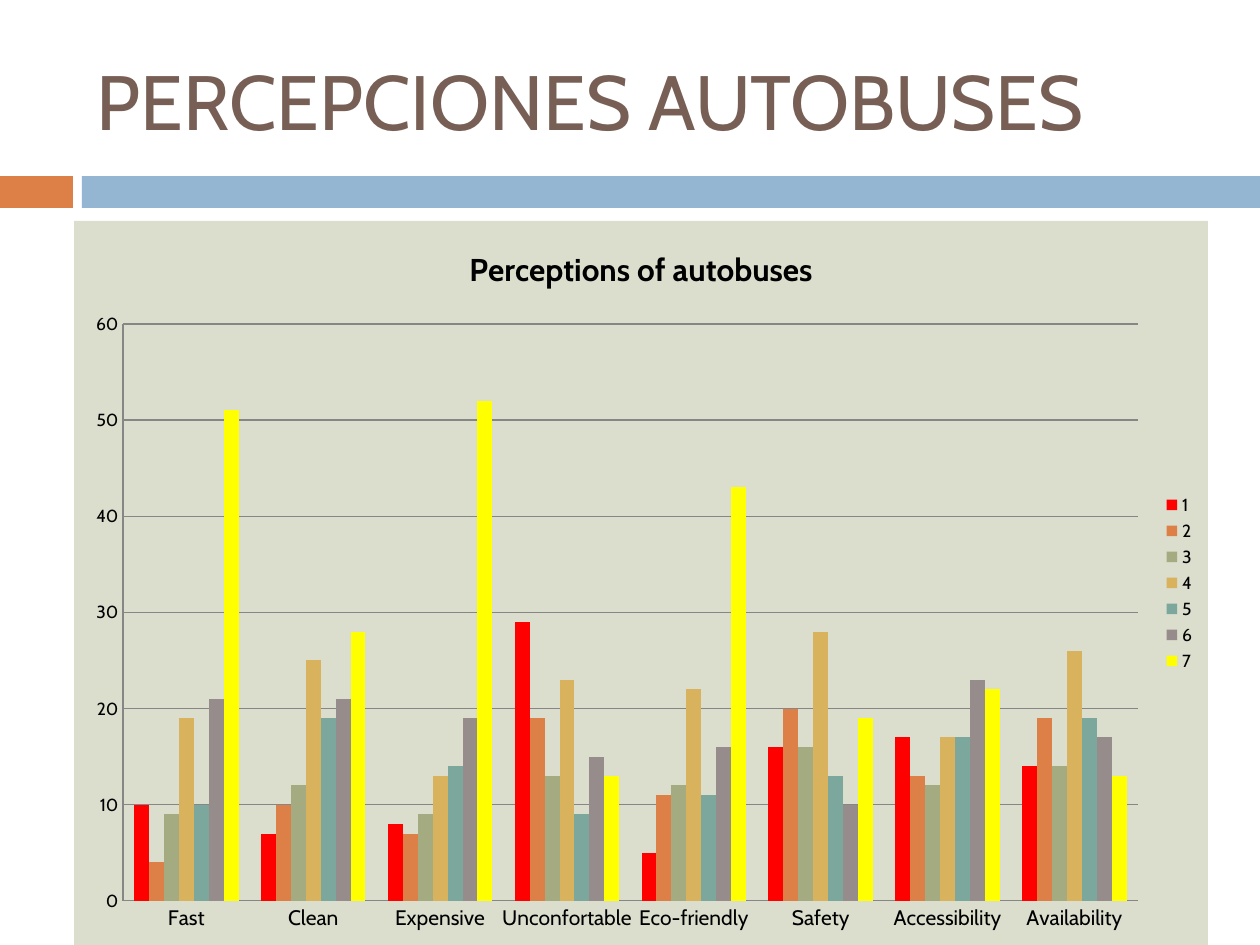
from lxml.etree import SubElement
from pptx import Presentation
from pptx.chart.data import CategoryChartData
from pptx.dml.color import RGBColor
from pptx.enum.chart import XL_CHART_TYPE as ChartType, XL_LEGEND_POSITION as LegendPosition
from pptx.enum.chart import XL_TICK_MARK as TickMark
from pptx.enum.shapes import MSO_SHAPE as Shape
from pptx.enum.text import MSO_ANCHOR as Anchor
from pptx.oxml import parse_xml
from pptx.oxml.ns import nsdecls, qn
from pptx.util import Pt

PX = 914400 // 126
FONT = "Cabin"
BLACK = RGBColor(0x00, 0x00, 0x00)
BROWN = RGBColor(0x77, 0x5F, 0x55)
ORANGE = RGBColor(0xDD, 0x80, 0x47)
BLUE = RGBColor(0x94, 0xB6, 0xD2)
SAGE = RGBColor(0xDB, 0xDD, 0xCD)
GRID_GRAY = RGBColor(0x86, 0x86, 0x86)
RED = RGBColor(0xFF, 0x00, 0x00)
OLIVE = RGBColor(0xA5, 0xAB, 0x81)
GOLD = RGBColor(0xD8, 0xB2, 0x5C)
TEAL = RGBColor(0x7B, 0xA7, 0x9D)
GRAY = RGBColor(0x96, 0x8C, 0x8C)
YELLOW = RGBColor(0xFF, 0xFF, 0x00)

CHART_BOX = (74, 221, 1134, 724)
PLOT_BOX = (123, 324, 1015, 577)
PERCEPTIONS = ["Fast", "Clean", "Expensive", "Unconfortable",
               "Eco-friendly", "Safety", "Accessibility", "Availability"]
RATINGS = [
    ("1", RED, (10, 7, 8, 29, 5, 16, 17, 14)),
    ("2", ORANGE, (4, 10, 7, 19, 11, 20, 13, 19)),
    ("3", OLIVE, (9, 12, 9, 13, 12, 16, 12, 14)),
    ("4", GOLD, (19, 25, 13, 23, 22, 28, 17, 26)),
    ("5", TEAL, (10, 19, 14, 9, 11, 13, 17, 19)),
    ("6", GRAY, (21, 21, 19, 15, 16, 10, 23, 17)),
    ("7", YELLOW, (51, 28, 52, 13, 43, 19, 22, 13)),
]


def px(*lengths):
    return [length * PX for length in lengths]


def set_font(font, size, color=BLACK, bold=False):
    font.name = FONT
    font.size = Pt(size)
    font.bold = bold
    font.color.rgb = color


def write(frame, text, **style):
    run = frame.paragraphs[0].add_run()
    run.text = text
    set_font(run.font, **style)


def add_heading(slide, text, box):
    frame = slide.shapes.add_textbox(*px(*box)).text_frame
    frame.word_wrap = True
    frame.vertical_anchor = Anchor.MIDDLE
    write(frame, text, size=44, color=BROWN)


def add_band(slide, box, color):
    band = slide.shapes.add_shape(Shape.RECTANGLE, *px(*box))
    band.shadow.inherit = False
    band.fill.solid()
    band.fill.fore_color.rgb = color
    band.line.fill.background()


def set_background(chart, color):
    chart.element.find(qn("c:chart")).addnext(parse_xml(
        f'<c:spPr {nsdecls("c", "a")}><a:solidFill><a:srgbClr val="{color}"/></a:solidFill>'
        '<a:ln><a:noFill/></a:ln></c:spPr>'))


def place_plot(chart):
    """Fix the inner plot area as fractions of the chart box."""
    plot_area = chart.element.find(qn("c:chart")).find(qn("c:plotArea"))
    for automatic in plot_area.findall(qn("c:layout")):
        plot_area.remove(automatic)
    layout = parse_xml(f'<c:layout {nsdecls("c")}/>')
    manual = SubElement(layout, qn("c:manualLayout"))
    left, top, width, height = CHART_BOX
    x, y, w, h = PLOT_BOX
    settings = [("layoutTarget", "inner"), ("xMode", "edge"), ("yMode", "edge"),
                ("x", (x - left) / width), ("y", (y - top) / height),
                ("w", w / width), ("h", h / height)]
    for tag, value in settings:
        SubElement(manual, qn(f"c:{tag}")).set("val", str(value))
    plot_area.insert(0, layout)


def style_axis(axis, size):
    axis.major_tick_mark = axis.minor_tick_mark = TickMark.NONE
    axis.format.line.color.rgb = GRID_GRAY
    set_font(axis.tick_labels.font, size)


def add_ratings_chart(slide):
    data = CategoryChartData()
    data.categories = PERCEPTIONS
    for name, _, values in RATINGS:
        data.add_series(name, values)
    chart = slide.shapes.add_chart(ChartType.COLUMN_CLUSTERED, *px(*CHART_BOX), data).chart
    set_font(chart.font, 10)
    set_background(chart, SAGE)
    place_plot(chart)

    chart.has_title = True
    write(chart.chart_title.text_frame, "Perceptions of autobuses", size=18, bold=True)
    chart.chart_title.include_in_layout = False
    chart.has_legend = True
    chart.legend.position = LegendPosition.RIGHT
    chart.legend.include_in_layout = False
    set_font(chart.legend.font, 10)

    style_axis(chart.category_axis, 12)
    scale = chart.value_axis
    style_axis(scale, 10)
    scale.minimum_scale, scale.maximum_scale, scale.major_unit = 0, 60, 10
    scale.has_major_gridlines = True
    scale.major_gridlines.format.line.color.rgb = GRID_GRAY

    columns = chart.plots[0]
    columns.vary_by_categories = False
    columns.gap_width = 150
    columns.overlap = 0
    for rating, (_, color, _) in zip(columns.series, RATINGS):
        rating.format.fill.solid()
        rating.format.fill.fore_color.rgb = color


def main():
    deck = Presentation()
    deck.slide_width, deck.slide_height = px(1260, 945)
    slide = deck.slides.add_slide(deck.slide_layouts[6])
    add_band(slide, (0, 176, 73, 32), ORANGE)
    add_band(slide, (82, 176, 1178, 32), BLUE)
    add_heading(slide, "PERCEPCIONES AUTOBUSES", (84, 32, 1124, 136))
    add_ratings_chart(slide)
    deck.save("out.pptx")


if __name__ == "__main__":
    main()
